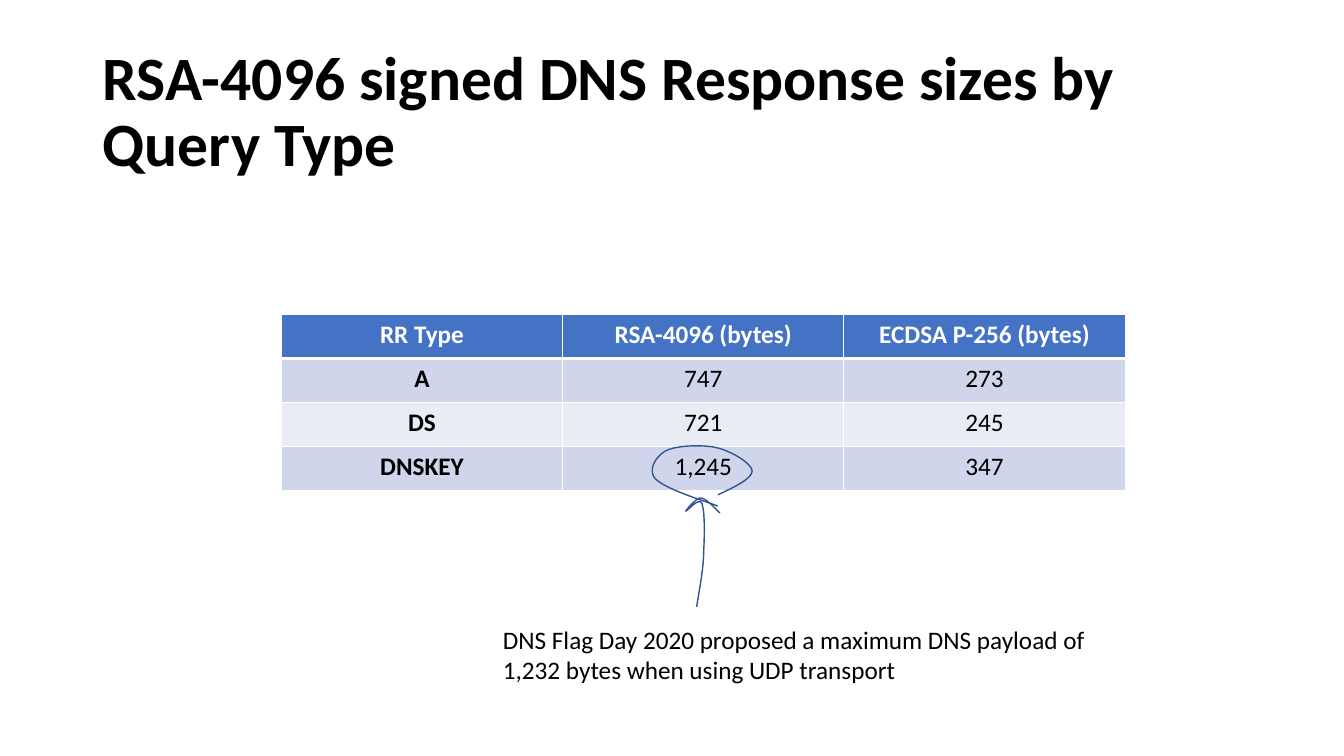
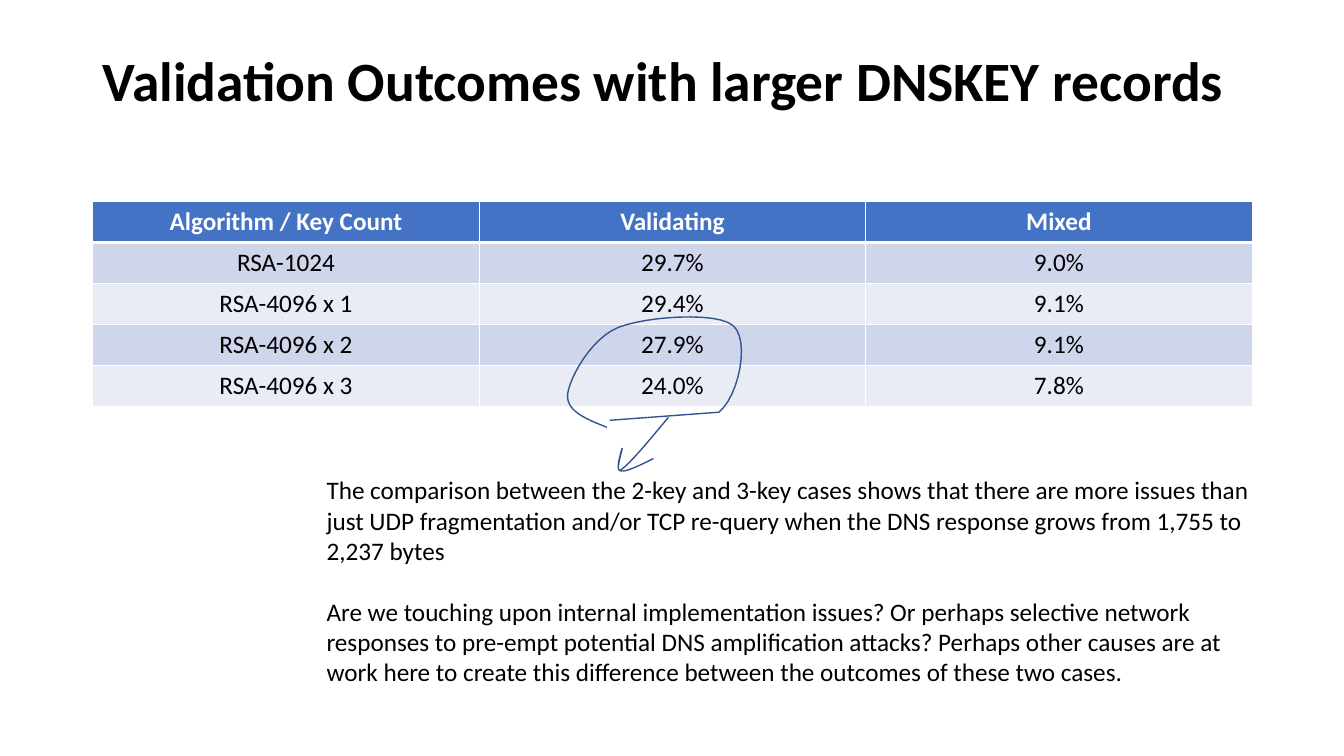
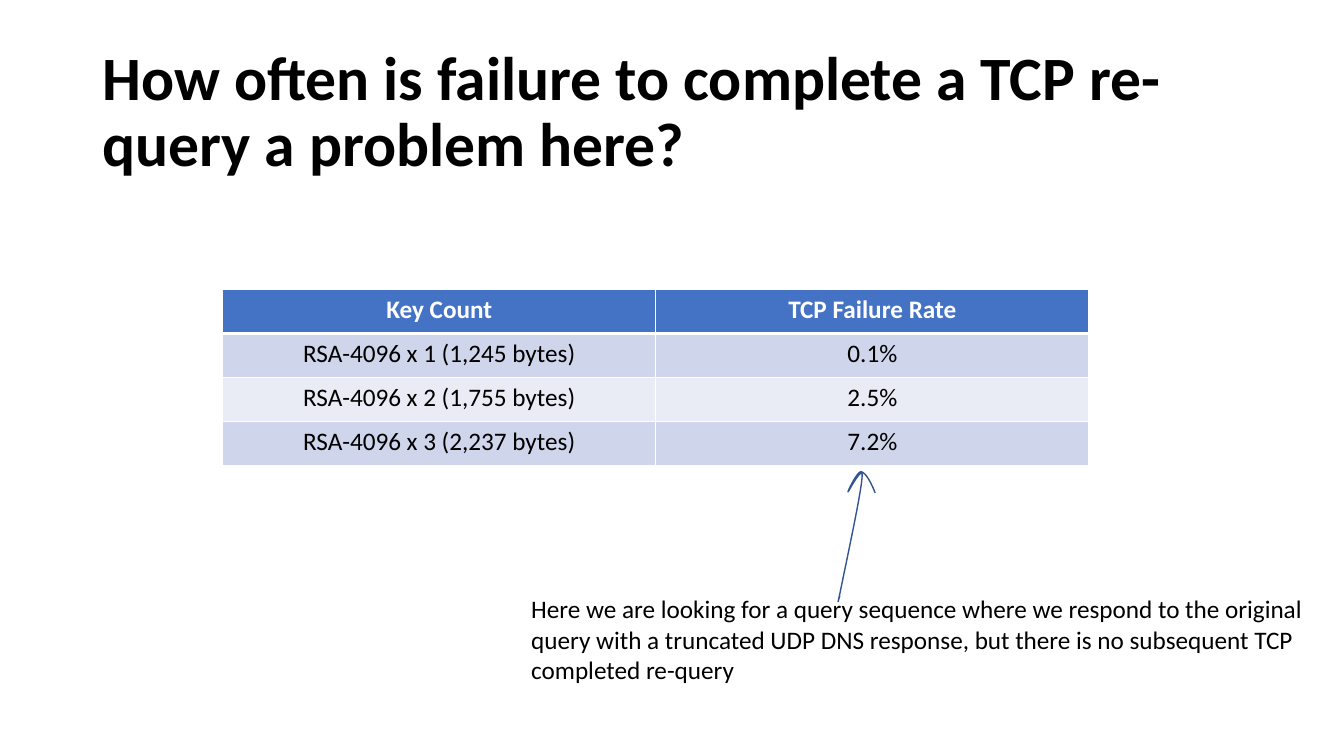
from dataclasses import dataclass

from lxml.etree import SubElement
from pptx import Presentation
from pptx.dml.color import RGBColor
from pptx.enum.text import MSO_ANCHOR as Anchor
from pptx.enum.text import PP_ALIGN as Align
from pptx.oxml.ns import qn
from pptx.util import Pt

PX = 9144  # EMU in one px, 100 px to the inch
FONT = "Calibri"
BLACK, WHITE = "000000", "FFFFFF"
HEADER_FILL = "4472C4"
BAND_FILLS = ("CFD5EA", "E9EBF5")
INK = "325491"
CURVE_STEPS = 12

Point = tuple[int, int]
Box = tuple[int, int, int, int]
TITLE_BOX: Box = (92, 40, 1150, 145)


@dataclass(frozen=True)
class Grid:
    box: Box
    rows: list[list[str]]
    bold_first_column: bool = False


@dataclass(frozen=True)
class Note:
    box: Box
    paragraphs: list[str]
    gap: int = 0


@dataclass(frozen=True)
class Stroke:
    """A pen line; a segment has one point if straight, three if a Bézier curve."""
    start: Point
    segments: list[tuple[Point, ...]]


@dataclass(frozen=True)
class Page:
    title: str
    grid: Grid
    note: Note
    strokes: list[Stroke]
    title_size: float = 44
    title_bottom_inset: int = 5


def color(value: str) -> RGBColor:
    return RGBColor.from_string(value)


def emu(*lengths: float) -> list[int]:
    return [round(length * PX) for length in lengths]


def write(frame, paragraphs: list[str], *, size: float = 18, bold: bool = False,
          ink: str = BLACK, align=Align.LEFT, spacing: float = 1.0, gap: int = 0) -> None:
    for index, text in enumerate(paragraphs):
        para = frame.paragraphs[0] if index == 0 else frame.add_paragraph()
        para.alignment = align
        para.line_spacing = spacing
        para.space_before = Pt(gap if index else 0)
        span = para.add_run()
        span.text = text
        span.font.name = FONT
        span.font.size = Pt(size)
        span.font.bold = bold
        span.font.color.rgb = color(ink)


def add_text(slide, box: Box, paragraphs: list[str], *, anchor=Anchor.TOP,
             bottom_inset: int = 5, **text_format) -> None:
    frame = slide.shapes.add_textbox(*emu(*box)).text_frame
    frame.word_wrap = True
    frame.vertical_anchor = anchor
    frame.margin_bottom = bottom_inset * PX
    write(frame, paragraphs, **text_format)


def add_borders(cell, **widths: int) -> None:
    """Draw white cell borders; widths are points by side (L, R, T, B)."""
    properties = cell._tc.get_or_add_tcPr()
    for side, width in widths.items():
        line = SubElement(properties, qn(f"a:ln{side}"), w=str(Pt(width)))
        fill = SubElement(line, qn("a:solidFill"))
        SubElement(fill, qn("a:srgbClr"), val=WHITE)


def add_grid(slide, grid: Grid) -> None:
    row_count, column_count = len(grid.rows), len(grid.rows[0])
    table = slide.shapes.add_table(row_count, column_count, *emu(*grid.box)).table
    for row, texts in enumerate(grid.rows):
        header = row == 0
        for column, text in enumerate(texts):
            cell = table.cell(row, column)
            add_borders(cell, L=1, R=1, T=3 if row == 1 else 1, B=3 if header else 1)
            cell.fill.solid()
            cell.fill.fore_color.rgb = color(
                HEADER_FILL if header else BAND_FILLS[(row - 1) % 2])
            write(cell.text_frame, [text], align=Align.CENTER,
                  bold=header or (grid.bold_first_column and column == 0),
                  ink=WHITE if header else BLACK)


def curve_points(*controls: Point) -> list[tuple[float, float]]:
    """Sample a cubic Bézier curve, leaving out its first point."""
    points = []
    for step in range(1, CURVE_STEPS + 1):
        t = step / CURVE_STEPS
        weights = ((1 - t) ** 3, 3 * t * (1 - t) ** 2, 3 * t * t * (1 - t), t ** 3)
        x, y = (sum(w * p[axis] for w, p in zip(weights, controls)) for axis in (0, 1))
        points.append((x, y))
    return points


def add_stroke(slide, stroke: Stroke) -> None:
    points, last = [], stroke.start
    for segment in stroke.segments:
        points += curve_points(last, *segment) if len(segment) == 3 else segment
        last = segment[-1]
    builder = slide.shapes.build_freeform(*emu(*stroke.start))
    builder.add_line_segments([emu(*point) for point in points], close=False)
    shape = builder.convert_to_shape()
    shape.shadow.inherit = False
    shape.fill.background()
    shape.line.color.rgb = color(INK)
    shape.line.width = Pt(1)


def add_page(deck, page: Page) -> None:
    slide = deck.slides.add_slide(deck.slide_layouts[6])
    add_text(slide, TITLE_BOX, [page.title], size=page.title_size, bold=True,
             spacing=0.9, anchor=Anchor.MIDDLE, bottom_inset=page.title_bottom_inset)
    add_grid(slide, page.grid)
    add_text(slide, page.note.box, page.note.paragraphs, gap=page.note.gap)
    for stroke in page.strokes:
        add_stroke(slide, stroke)


PAGES = [
    Page(
        "RSA-4096 signed DNS Response sizes by Query Type",
        Grid((279, 312, 837, 175), [
            ["RR Type", "RSA-4096 (bytes)", "ECDSA P-256 (bytes)"],
            ["A", "747", "273"],
            ["DS", "721", "245"],
            ["DNSKEY", "1,245", "347"],
        ], bold_first_column=True),
        Note((489, 614, 604, 71), [
            "DNS Flag Day 2020 proposed a maximum DNS payload of",
            "1,232 bytes when using UDP transport",
        ]),
        [
            Stroke((691, 602), [
                ((694, 583), (698, 563), (698, 546)),
                ((699, 528), (699, 506), (696, 499)),
                ((693, 493), (681, 508), (680, 507)),
                ((680, 507), (690, 494), (695, 494)),
                ((701, 495), (707, 502), (714, 509)),
            ]),
            Stroke((712, 491), [
                ((729, 483), (746, 475), (746, 467)),
                ((745, 459), (724, 447), (710, 444)),
                ((696, 441), (671, 442), (661, 447)),
                ((651, 452), (642, 466), (650, 475)),
                ((659, 484), (686, 493), (712, 502)),
            ]),
        ],
    ),
    Page(
        "Validation Outcomes with larger DNSKEY records",
        Grid((92, 200, 1150, 203), [
            ["Algorithm / Key Count", "Validating", "Mixed"],
            ["RSA-1024", "29.7%", "9.0%"],
            ["RSA-4096 x 1", "29.4%", "9.1%"],
            ["RSA-4096 x 2", "27.9%", "9.1%"],
            ["RSA-4096 x 3", "24.0%", "7.8%"],
        ]),
        Note((314, 466, 938, 222), [
            "The comparison between the 2-key and 3-key cases shows that there are more "
            "issues than just UDP fragmentation and/or TCP re-query when the DNS response "
            "grows from 1,755 to 2,237 bytes",
            "Are we touching upon internal implementation issues? Or perhaps selective "
            "network responses to pre-empt potential DNS amplification attacks? Perhaps "
            "other causes are at work here to create this difference between the outcomes "
            "of these two cases.",
        ], gap=22),
        [
            Stroke((605, 417), [
                ((713, 409),),
                ((733, 393), (744, 337), (727, 323)),
                ((711, 309), (640, 314), (613, 325)),
                ((586, 336), (565, 375), (563, 391)),
                ((561, 408), (582, 416), (602, 424)),
            ]),
            Stroke((663, 414), [
                ((643, 438), (624, 461), (616, 466)),
                ((609, 471), (618, 444), (617, 445)),
                ((617, 445), (610, 466), (615, 467)),
                ((620, 469), (634, 462), (648, 455)),
            ]),
        ],
        title_size=39.6,
        title_bottom_inset=65,
    ),
    Page(
        "How often is failure to complete a TCP re-query a problem here?",
        Grid((221, 287, 859, 175), [
            ["Key Count", "TCP Failure Rate"],
            ["RSA-4096 x 1 (1,245 bytes)", "0.1%"],
            ["RSA-4096 x 2 (1,755 bytes)", "2.5%"],
            ["RSA-4096 x 3 (2,237 bytes)", "7.2%"],
        ]),
        Note((517, 584, 789, 101), [
            "Here we are looking for a query sequence where we respond to the original "
            "query with a truncated UDP DNS response, but there is no subsequent TCP "
            "completed re-query",
        ]),
        [
            Stroke((833, 591), [
                ((831, 597), (830, 603), (834, 584)),
                ((838, 564), (854, 490), (855, 474)),
                ((857, 458), (841, 489), (841, 488)),
                ((841, 487), (850, 468), (854, 468)),
                ((859, 469), (864, 479), (868, 489)),
            ]),
        ],
    ),
]


def main() -> None:
    deck = Presentation()
    deck.slide_width, deck.slide_height = emu(1333, 750)
    for page in PAGES:
        add_page(deck, page)
    deck.save("out.pptx")


if __name__ == "__main__":
    main()
